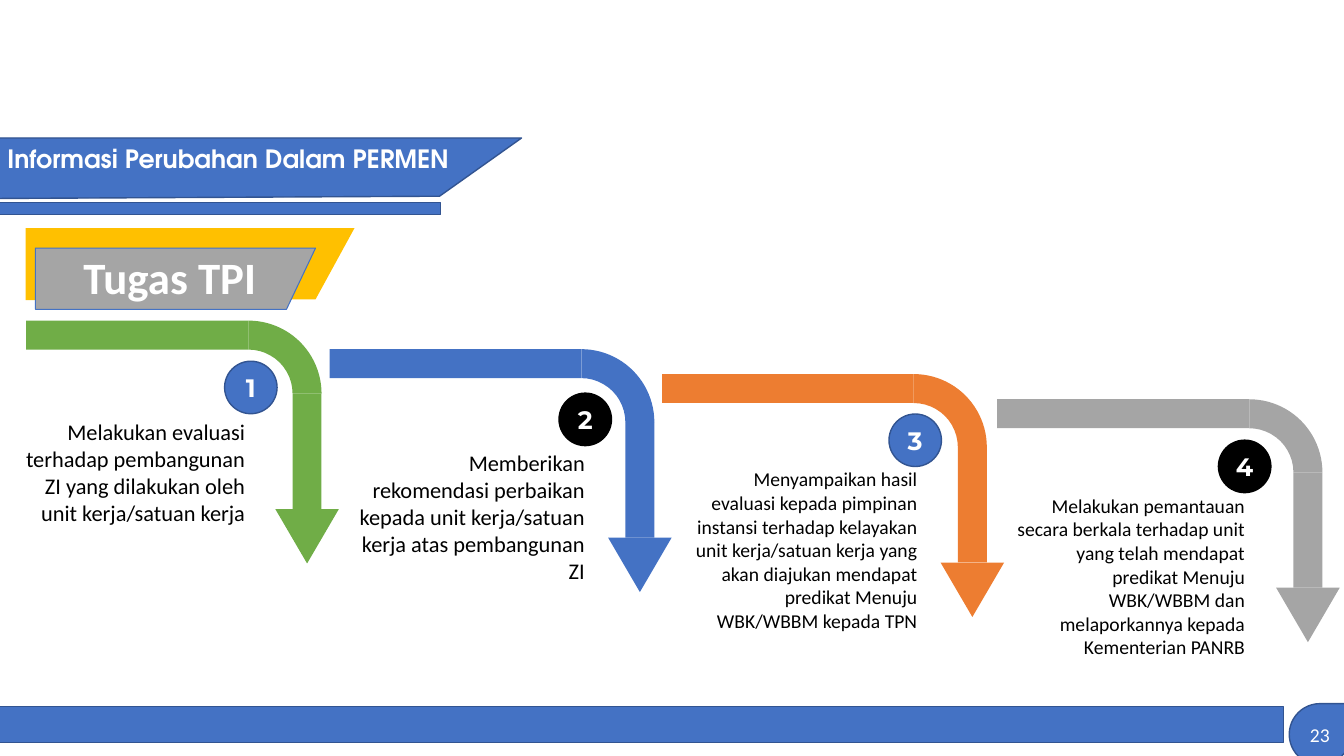
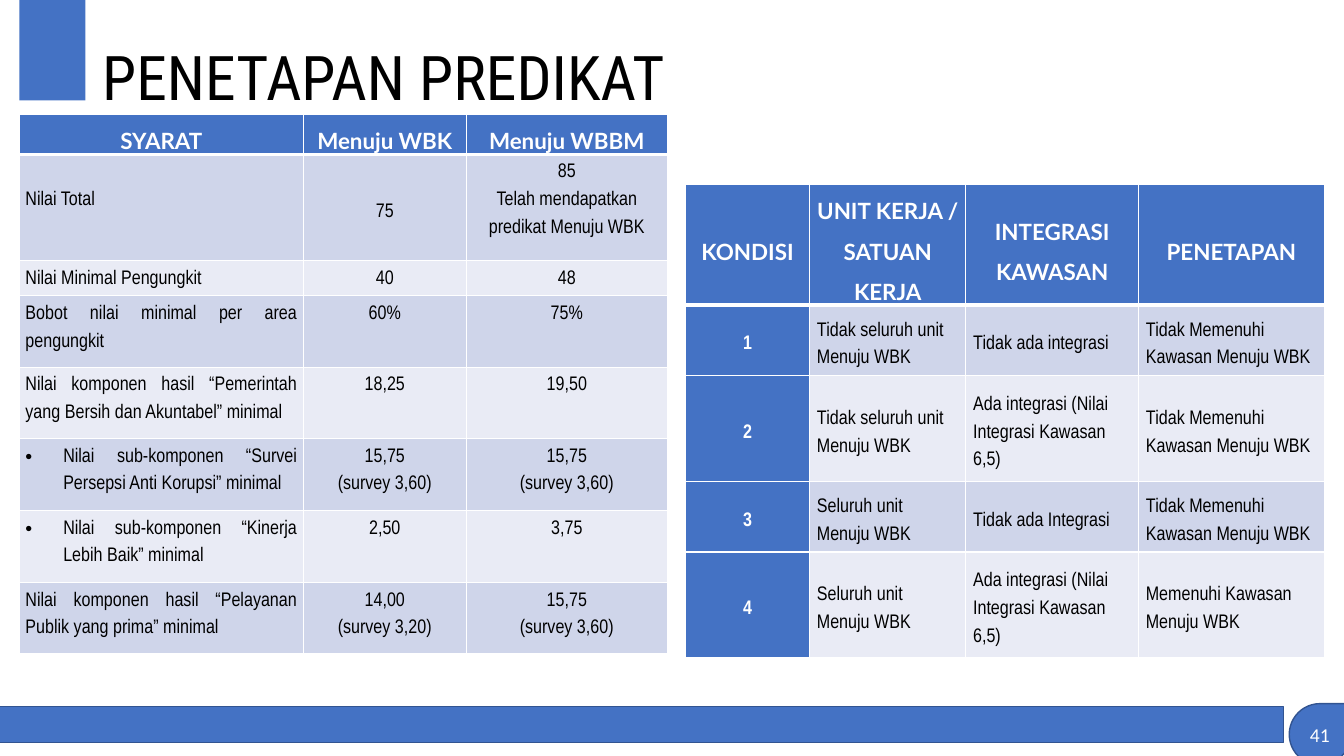
from lxml.etree import SubElement
from pptx import Presentation
from pptx.dml.color import RGBColor
from pptx.enum.shapes import MSO_SHAPE as Preset
from pptx.enum.text import MSO_ANCHOR as Anchor, MSO_AUTO_SIZE as AutoSize, PP_ALIGN as Align
from pptx.oxml.ns import qn
from pptx.util import Pt

# Shared colours and fonts
BLUE, DARK_BLUE, GREY = "4472C4", "325491", "A5A5A5"
GREEN, ORANGE, YELLOW = "70AD47", "ED7D31", "FFC000"
BLACK, WHITE = "000000", "FFFFFF"
STRIPES = ("CFD5EA", "E9EBF5")
BODY, NARROW, HEADER = "Calibri", "Arial Narrow", "Lato"

# Arrow measures
THICK, ARC_SIZE = 20.7, 104.4
SHAFT_END, HEAD_WIDTH, HEAD_HEIGHT = 134.6, 45.4, 38.9

# Arrow colour, bar left, arc left, top; badge left, top, fill, line;
# text left, top, height, size; text
TASKS = [
    ((GREEN, 18.7, 125.3, 229), (160.4, 258, BLUE, DARK_BLUE),
     (2.9, 295.2, 85, 16),
     "Melakukan evaluasi terhadap pembangunan ZI yang dilakukan oleh unit kerja/satuan kerja"),
    ((BLUE, 235.4, 363, 249.4), (399.3, 280.8, BLACK, BLACK),
     (245.5, 317.5, 104.4, 16),
     "Memberikan rekomendasi perbaikan kepada unit kerja/satuan kerja atas pembangunan ZI"),
    ((ORANGE, 473, 600.5, 267.2), (635, 295.7, BLUE, DARK_BLUE),
     (483.1, 330.3, 143.3, 14),
     "Menyampaikan hasil evaluasi kepada pimpinan instansi terhadap kelayakan unit "
     "kerja/satuan kerja yang akan diajukan mendapat predikat Menuju WBK/WBBM kepada TPN"),
    ((GREY, 712.3, 840.2, 285.2), (870.3, 314.4, BLACK, BLACK),
     (717.1, 349.2, 126, 14),
     "Melakukan pemantauan secara berkala terhadap unit yang telah mendapat predikat "
     "Menuju WBK/WBBM dan melaporkannya kepada Kementerian PANRB"),
]

REQUIREMENTS = [
    ("SYARAT", "Menuju WBK", "Menuju WBBM"),
    ("Nilai Total", "75", "85\nTelah mendapatkan predikat Menuju WBK"),
    ("Nilai Minimal Pengungkit", "40", "48"),
    ("Bobot nilai minimal per area pengungkit", "60%", "75%"),
    ("Nilai komponen hasil “Pemerintah yang Bersih dan Akuntabel” minimal", "18,25", "19,50"),
    ("Nilai sub-komponen “Survei Persepsi Anti Korupsi” minimal",
     "15,75\n(survey 3,60)", "15,75\n(survey 3,60)"),
    ("Nilai sub-komponen “Kinerja Lebih Baik” minimal", "2,50", "3,75"),
    ("Nilai komponen hasil “Pelayanan Publik yang prima” minimal",
     "14,00\n(survey 3,20)", "15,75\n(survey 3,60)"),
]

CONDITIONS = [
    ("KONDISI", "UNIT KERJA / SATUAN KERJA", "INTEGRASI KAWASAN", "PENETAPAN"),
    ("1", "Tidak seluruh unit Menuju WBK", "Tidak ada integrasi",
     "Tidak Memenuhi Kawasan Menuju WBK"),
    ("2", "Tidak seluruh unit Menuju WBK", "Ada integrasi (Nilai Integrasi Kawasan 6,5)",
     "Tidak Memenuhi Kawasan Menuju WBK"),
    ("3", "Seluruh unit Menuju WBK", "Tidak ada Integrasi",
     "Tidak Memenuhi Kawasan Menuju WBK"),
    ("4", "Seluruh unit Menuju WBK", "Ada integrasi (Nilai Integrasi Kawasan 6,5)",
     "Memenuhi Kawasan Menuju WBK"),
]


def colour(code):
    return RGBColor.from_string(code)


# Text
def write(frame, text, font, size, ink, align, bold=False, spacing=None):
    for index, line in enumerate(text.split("\n")):
        para = frame.add_paragraph() if index else frame.paragraphs[0]
        para.alignment = align
        para.line_spacing = spacing
        span = para.add_run()
        span.text = line
        span.font.name = font
        span.font.size = Pt(size)
        span.font.bold = bold
        span.font.color.rgb = colour(ink)


def set_margins(item, sides, ends):
    item.margin_left = item.margin_right = Pt(sides)
    item.margin_top = item.margin_bottom = Pt(ends)


def add_text(page, left, top, width, height, text, size, align, ink=BLACK, bold=False):
    box = page.shapes.add_textbox(Pt(left), Pt(top), Pt(width), Pt(height))
    box.text_frame.word_wrap = True
    write(box.text_frame, text, BODY, size, ink, align, bold)


def set_title(page, left, top, width, height, text, font, size, ink, bold=False, margins=(0, 0)):
    title = page.shapes.title
    title.left, title.top, title.width, title.height = Pt(left), Pt(top), Pt(width), Pt(height)
    frame = title.text_frame
    frame.word_wrap = True
    frame.auto_size = AutoSize.NONE
    frame.vertical_anchor = Anchor.TOP
    set_margins(frame, *margins)
    write(frame, text, font, size, ink, Align.LEFT, bold)
    # Bring the title in front of the shapes drawn so far
    title.element.getparent().append(title.element)


# Shapes
def paint(shape, fill, line=None, weight=1):
    shape.shadow.inherit = False
    shape.fill.solid()
    shape.fill.fore_color.rgb = colour(fill)
    if line:
        shape.line.color.rgb = colour(line)
        shape.line.width = Pt(weight)
    else:
        shape.line.fill.background()


def add_preset(page, preset, left, top, width, height, fill, line=None):
    shape = page.shapes.add_shape(preset, Pt(left), Pt(top), Pt(width), Pt(height))
    paint(shape, fill, line)
    return shape


def add_outline(page, points, fill, line=None, weight=1):
    start, *rest = [(Pt(x), Pt(y)) for x, y in points]
    builder = page.shapes.build_freeform(*start)
    builder.add_line_segments(rest, close=True)
    paint(builder.convert_to_shape(), fill, line, weight)


def add_label_shape(page, preset, left, top, side, fill, line, text, font, size, bold):
    shape = add_preset(page, preset, left, top, side, side, fill, line)
    frame = shape.text_frame
    frame.vertical_anchor = Anchor.MIDDLE
    set_margins(frame, 0, 0)
    write(frame, text, font, size, WHITE, Align.CENTER, bold)


def add_bent_arrow(page, fill, bar_left, arc_left, top):
    radius = ARC_SIZE / 2
    shaft_left = arc_left + ARC_SIZE - THICK
    head_left = shaft_left + (THICK - HEAD_WIDTH) / 2
    add_preset(page, Preset.RECTANGLE, bar_left, top, arc_left + radius - bar_left, THICK, fill)
    arc = add_preset(page, Preset.BLOCK_ARC, arc_left, top, ARC_SIZE, ARC_SIZE, fill)
    # Quarter turn from 270 degrees to 0; the last value is the thickness
    for index, value in enumerate((162, 0, THICK / ARC_SIZE)):
        arc.adjustments[index] = value
    add_preset(page, Preset.RECTANGLE, shaft_left, top + radius, THICK, SHAFT_END - radius, fill)
    head = add_preset(page, Preset.ISOSCELES_TRIANGLE, head_left, top + SHAFT_END,
                      HEAD_WIDTH, HEAD_HEIGHT, fill)
    head.rotation = 180


def add_footer(page, number):
    add_label_shape(page, Preset.TEAR, 920.9, 502.6, 43.9, BLUE, DARK_BLUE,
                    number, BODY, 14, False)
    add_preset(page, Preset.RECTANGLE, -44.6, 504.7, 961.2, 25.9, BLUE, DARK_BLUE)


# Tables
def set_borders(cell, top, bottom):
    properties = cell._tc.get_or_add_tcPr()
    for side, weight in (("L", 1), ("R", 1), ("T", top), ("B", bottom)):
        line = SubElement(properties, qn("a:ln" + side), w=str(Pt(weight)))
        SubElement(SubElement(line, qn("a:solidFill")), qn("a:srgbClr"), val=WHITE)


def add_bullet(para, indent):
    properties = para._p.get_or_add_pPr()
    properties.set("marL", str(Pt(indent)))
    properties.set("indent", str(-Pt(indent)))
    SubElement(properties, qn("a:buFont"), typeface="Arial")
    SubElement(properties, qn("a:buChar"), char="•")


def add_grid(page, left, top, widths, heights, rows, aligns, anchor, margin, key_column=False):
    frame = page.shapes.add_table(len(rows), len(widths), Pt(left), Pt(top),
                                  Pt(sum(widths)), Pt(sum(heights)))
    table = frame.table
    for column, width in zip(table.columns, widths):
        column.width = Pt(width)
    for r, (row, height) in enumerate(zip(rows, heights)):
        table.rows[r].height = Pt(height)
        for c, text in enumerate(row):
            cell = table.cell(r, c)
            header = r == 0
            strong = header or (key_column and c == 0)
            set_margins(cell, margin, 0)
            cell.vertical_anchor = Anchor.MIDDLE if header else anchor
            set_borders(cell, 3 if r == 1 else 1, 3 if header else 1)
            cell.fill.solid()
            cell.fill.fore_color.rgb = colour(BLUE if strong else STRIPES[(r - 1) % 2])
            write(cell.text_frame, text, HEADER if header else NARROW, 16 if header else 14,
                  WHITE if strong else BLACK, Align.CENTER if header else aligns[c],
                  strong, 1.5)
    return table


# Slides
def build_tasks(page):
    add_outline(page, [(18.3, 162.9), (253.2, 162.9), (225.4, 213.8), (18.3, 214.4)], YELLOW)
    add_outline(page, [(25.3, 177.2), (225.4, 177.2), (204.6, 221), (25.3, 221)],
                GREY, BLUE, 0.75)
    add_outline(page, [(-2, 98.6), (372.6, 98.6), (314, 140.2), (-1.5, 141.8)], BLUE, DARK_BLUE)
    add_preset(page, Preset.RECTANGLE, -2, 144.7, 316.8, 8.6, BLUE, DARK_BLUE)
    set_title(page, -2, 98.6, 374, 36, "Informasi Perubahan Dalam PERMEN",
              "TeX Gyre Adventor", 18, WHITE, True, (7.2, 3.6))
    add_text(page, 25.3, 175, 192, 46, "Tugas TPI", 32, Align.CENTER, WHITE, True)
    for number, (arrow, badge, place, text) in enumerate(TASKS, 1):
        add_bent_arrow(page, *arrow)
        left, top, fill, line = badge
        add_label_shape(page, Preset.OVAL, left, top, 37.5, fill, line,
                        str(number), "Montserrat", 18, True)
        left, top, height, size = place
        add_text(page, left, top, 179.3, height, text, size, Align.RIGHT)
    add_footer(page, "23")


def build_grades(page):
    add_footer(page, "41")
    add_preset(page, Preset.RECTANGLE, 13.9, 0, 47.2, 71.8, BLUE)
    set_title(page, 73, 27.5, 500, 54, "PENETAPAN PREDIKAT", "Roboto Condensed", 44, BLACK)
    requirements = add_grid(page, 13.9, 81.6, (202.7, 116.6, 143.5),
                            (28, 76, 25, 51, 51, 51.5, 51.5, 51), REQUIREMENTS,
                            (Align.JUSTIFY, Align.CENTER, Align.CENTER), Anchor.TOP, 4.3)
    # The total sits lower in its tall row
    requirements.cell(1, 0).margin_top = Pt(19.5)
    requirements.cell(1, 1).vertical_anchor = Anchor.MIDDLE
    for row in (5, 6):
        add_bullet(requirements.cell(row, 0).text_frame.paragraphs[0], 27)
    add_grid(page, 489.7, 131.8, (88.6, 111.6, 123.4, 132.6), (85.5, 50.5, 75.5, 50.5, 75.5),
             CONDITIONS, (Align.CENTER, Align.LEFT, Align.LEFT, Align.LEFT),
             Anchor.MIDDLE, 5.2, key_column=True)


def main():
    deck = Presentation()
    deck.slide_width, deck.slide_height = Pt(960), Pt(540)
    title_only = deck.slide_layouts[5]
    for build in (build_tasks, build_grades):
        build(deck.slides.add_slide(title_only))
    deck.save("out.pptx")


if __name__ == "__main__":
    main()
